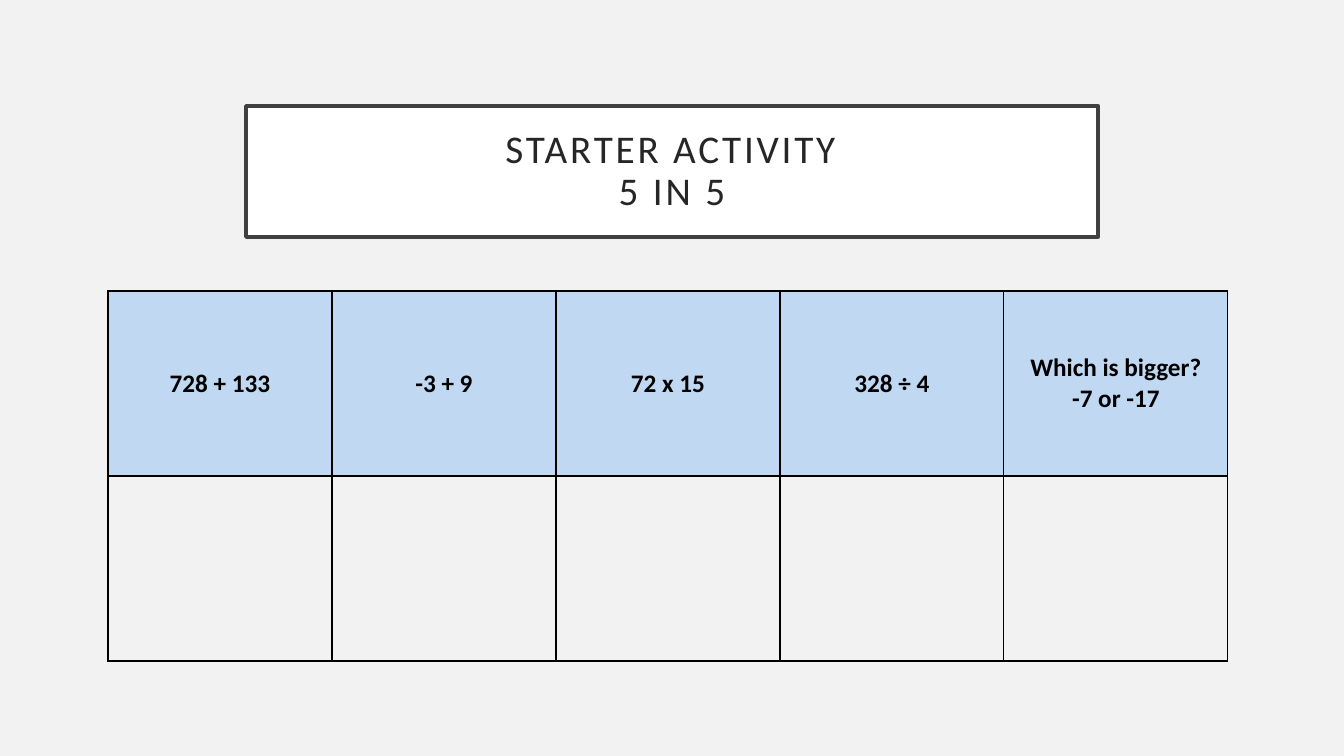
"""Build a starter activity slide with a title box and a table of five questions."""
from lxml import etree
from pptx import Presentation
from pptx.dml.color import RGBColor
from pptx.enum.shapes import MSO_SHAPE
from pptx.enum.text import MSO_ANCHOR, PP_ALIGN
from pptx.oxml.ns import qn
from pptx.util import Emu, Pt

TITLE = "STARTER ACTIVITY\v5 IN 5"
QUESTIONS = ["728 + 133", "-3 + 9", "72 x 15", "328 ÷ 4", "Which is bigger?\n-7 or -17"]

SLIDE_W, SLIDE_H = 1344, 756
TITLE_BOX = (246, 106, 852, 131)
TITLE_INSET = 20
TABLE_LEFT, TABLE_TOP = 108, 291
COL_W, ROW_H = 224, 185
ROWS = 2

FONT = "Calibri"
BACKGROUND = RGBColor(0xF2, 0xF2, 0xF2)
WHITE = RGBColor(0xFF, 0xFF, 0xFF)
BLACK = RGBColor(0x00, 0x00, 0x00)
FRAME = RGBColor(0x40, 0x40, 0x40)
TITLE_COLOR = RGBColor(0x26, 0x26, 0x26)
QUESTION_FILL = RGBColor(0xC1, 0xD8, 0xF2)
TITLE_FORMAT = {"name": FONT, "size": Pt(28), "bold": False}
QUESTION_FORMAT = {"name": FONT, "size": Pt(18), "bold": True}
RECT = MSO_SHAPE.RECTANGLE
MIDDLE = MSO_ANCHOR.MIDDLE
CENTER = PP_ALIGN.CENTER


def px(n):
    return Emu(round(n * 914400 / 100.8))


def style_text(tf, font_format, color):
    for p in tf.paragraphs:
        p.alignment = CENTER
        for r in p.runs:
            for name, value in font_format.items():
                setattr(r.font, name, value)
            r.font.color.rgb = color


def add_title(slide):
    s = slide.shapes.add_shape(RECT, *map(px, TITLE_BOX))
    s.shadow.inherit = False
    s.fill.solid()
    s.fill.fore_color.rgb = WHITE
    s.line.color.rgb = FRAME
    s.line.width = Pt(2.5)
    tf = s.text_frame
    tf.word_wrap = True
    tf.vertical_anchor = MIDDLE
    for side in ("left", "top", "right", "bottom"):
        setattr(tf, f"margin_{side}", px(TITLE_INSET))
    tf.text = TITLE
    style_text(tf, TITLE_FORMAT, TITLE_COLOR)
    p = tf.paragraphs[0]
    p.line_spacing = 0.9
    for r in p.runs:
        r.font._element.set("spc", "200")


def add_borders(cell):
    props = cell._tc.get_or_add_tcPr()
    for i, side in enumerate(("lnL", "lnR", "lnT", "lnB")):
        line = etree.Element(qn(f"a:{side}"), w=str(Pt(1)))
        fill = etree.SubElement(line, qn("a:solidFill"))
        etree.SubElement(fill, qn("a:srgbClr"), val=str(BLACK))
        props.insert(i, line)


def add_questions(slide):
    cols = len(QUESTIONS)
    box = (TABLE_LEFT, TABLE_TOP, COL_W * cols, ROW_H * ROWS)
    table = slide.shapes.add_table(ROWS, cols, *map(px, box)).table
    table.first_row = table.horz_banding = False
    for col in table.columns:
        col.width = px(COL_W)
    for row in table.rows:
        row.height = px(ROW_H)
    for cell in table.iter_cells():
        cell.fill.solid()
        cell.fill.fore_color.rgb = BACKGROUND
        add_borders(cell)
    for col, question in enumerate(QUESTIONS):
        cell = table.cell(0, col)
        cell.fill.fore_color.rgb = QUESTION_FILL
        cell.vertical_anchor = MIDDLE
        cell.text = question
        style_text(cell.text_frame, QUESTION_FORMAT, BLACK)


def main():
    prs = Presentation()
    prs.slide_width, prs.slide_height = px(SLIDE_W), px(SLIDE_H)
    slide = prs.slides.add_slide(prs.slide_layouts[6])
    slide.background.fill.solid()
    slide.background.fill.fore_color.rgb = BACKGROUND
    add_title(slide)
    add_questions(slide)
    prs.save("out.pptx")


if __name__ == "__main__":
    main()
